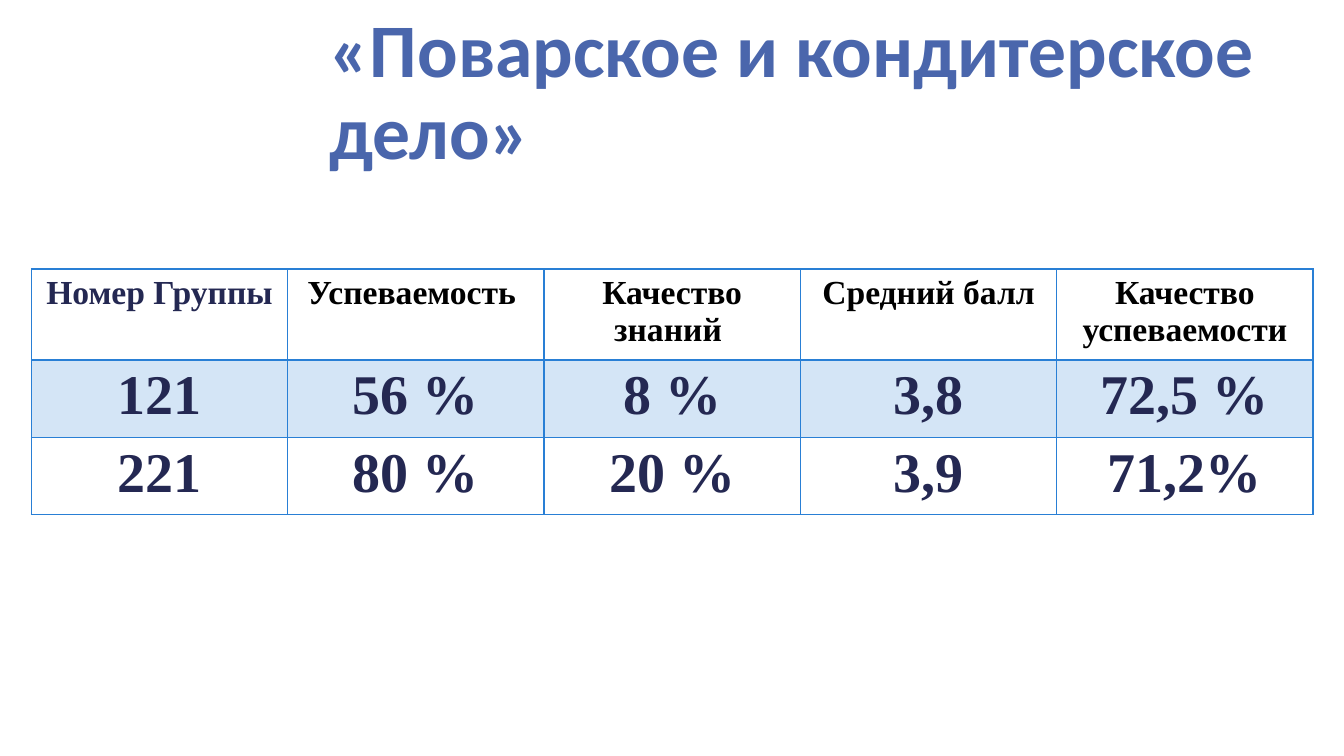
from lxml import etree
from pptx import Presentation
from pptx.dml.color import RGBColor
from pptx.enum.text import MSO_ANCHOR, PP_ALIGN
from pptx.oxml.ns import qn
from pptx.util import Cm, Pt

MIDDLE = MSO_ANCHOR.MIDDLE
LEFT = PP_ALIGN.LEFT
CENTER = PP_ALIGN.CENTER
INDIGO = RGBColor(0x4A, 0x66, 0xAC)
NAVY = RGBColor(0x24, 0x28, 0x52)
BLACK = RGBColor(0, 0, 0)
BLUE = RGBColor(0x29, 0x7F, 0xD5)


def write(frame, text, font="Times New Roman", size=40, color=NAVY,
          align=CENTER, space=1.0):
    para = frame.paragraphs[0]
    para.alignment = align
    para.line_spacing = space
    run = para.add_run()
    run.text = text
    run.font.name = font
    run.font.size = Pt(size)
    run.font.bold = True
    run.font.color.rgb = color


def border(cell, side, width):
    props = cell._tc.get_or_add_tcPr()
    line = etree.SubElement(props, qn("a:ln" + side), w=str(Pt(width)))
    fill = etree.SubElement(line, qn("a:solidFill"))
    etree.SubElement(fill, qn("a:srgbClr"), val=str(BLUE))


deck = Presentation()
deck.slide_width = Cm(33.87)
deck.slide_height = Cm(19.05)
slide = deck.slides.add_slide(deck.slide_layouts[6])

title = slide.shapes.add_textbox(Cm(8.05), Cm(0.53), Cm(25.22), Cm(3.68))
title.text_frame.word_wrap = True
title.text_frame.vertical_anchor = MIDDLE
write(title.text_frame, "«Поварское и кондитерское дело»", font="Calibri",
      size=54, color=INDIGO, align=LEFT, space=0.9)

marks = [
    ["Номер Группы", "Успеваемость ", "Качество знаний ", "Средний балл",
     "Качество успеваемости"],
    ["121", "56 %", "8 %", "3,8", "72,5 %"],
    ["221", "80 %", "20 %", "3,9", "71,2%"],
]
heights = [2.12, 1.83, 1.83]

frame = slide.shapes.add_table(3, 5, Cm(0.79), Cm(6.78), Cm(32.3),
                               Cm(sum(heights)))
table = frame.table
for col in table.columns:
    col.width = Cm(6.46)

for r, row in enumerate(marks):
    table.rows[r].height = Cm(heights[r])
    for c, text in enumerate(row):
        cell = table.cell(r, c)
        head = r == 0
        write(cell.text_frame, text, size=24 if head else 40,
              color=BLACK if head and c else NAVY)
        for side in "LRTB":
            thick = (r, side) in ((0, "B"), (1, "T"))
            border(cell, side, 2 if thick else 1)
        if r == 1:
            cell.fill.solid()
            cell.fill.fore_color.rgb = BLUE
            tint = cell._tc.tcPr.find(qn("a:solidFill"))[0]
            etree.SubElement(tint, qn("a:alpha"), val="20000")
        else:
            cell.fill.background()

deck.save("out.pptx")
